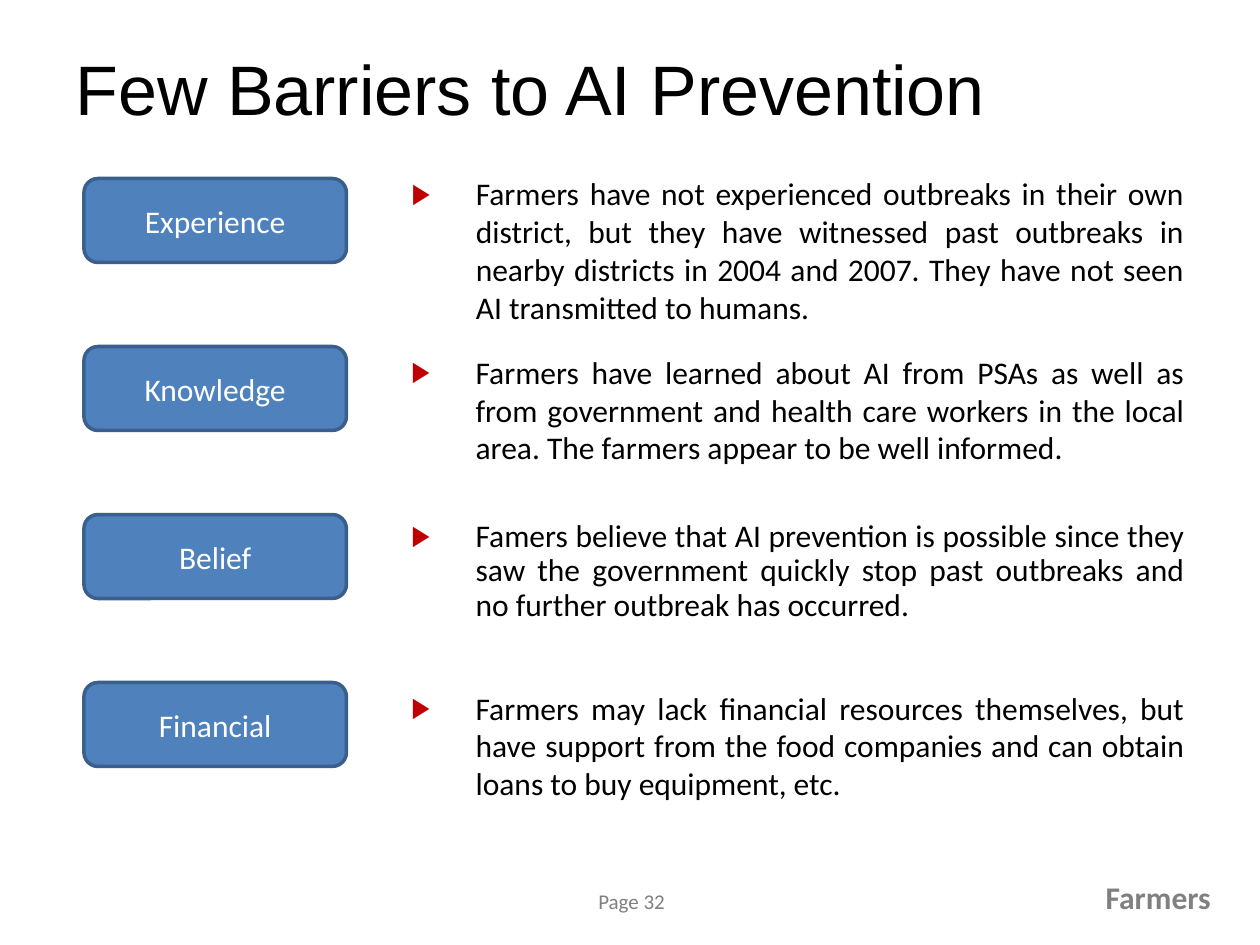
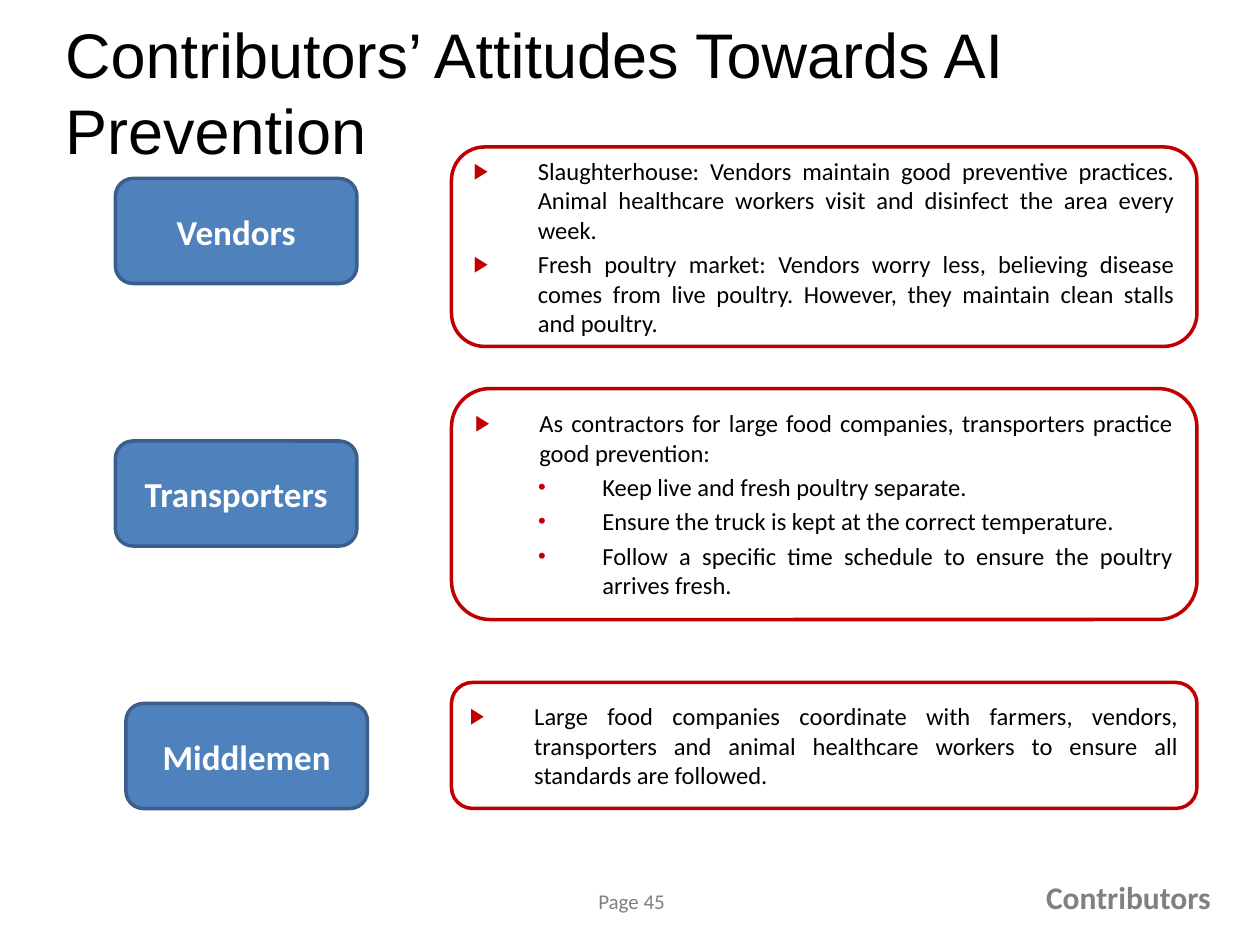
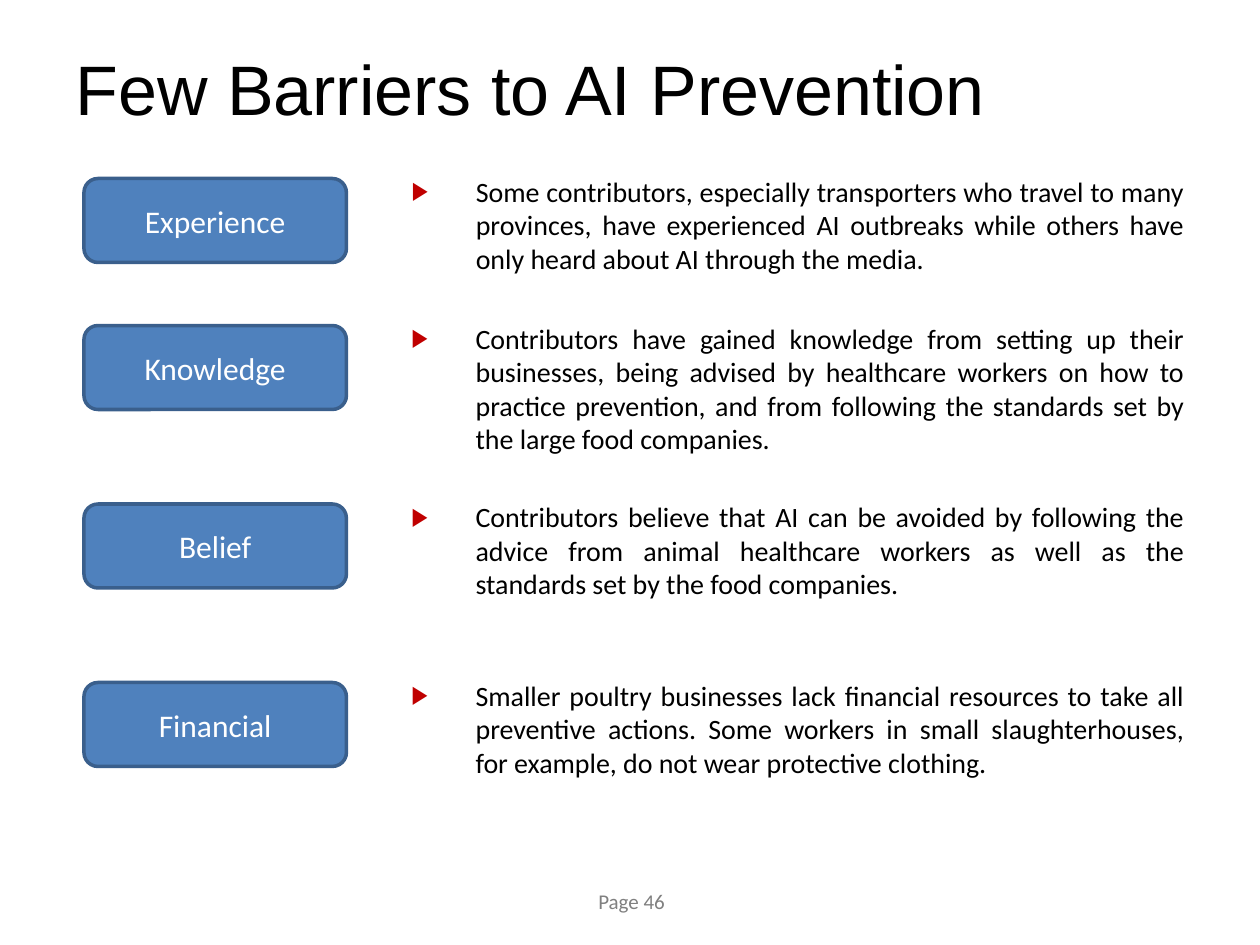
import lxml.etree
import pptx
import pptx.dml.color
import pptx.enum.shapes
import pptx.enum.text
import pptx.oxml.ns
import pptx.util

RGBColor = pptx.dml.color.RGBColor
Align = pptx.enum.text.PP_ALIGN
Anchor = pptx.enum.text.MSO_ANCHOR

BLACK = RGBColor(0x00, 0x00, 0x00)
WHITE = RGBColor(0xFF, 0xFF, 0xFF)
GRAY = RGBColor(0x80, 0x80, 0x80)
BLUE = RGBColor(0x4F, 0x81, 0xBD)
NAVY = RGBColor(0x3A, 0x5F, 0x8C)
RED = RGBColor(0xC0, 0x00, 0x00)

COLUMNS, ROWS = 120, 90
TITLE_AND_CONTENT, TITLE_ONLY = 1, 5
BULLETS = "▶•"
INDENT = pptx.util.Inches(0.51)
LEVEL_STEP = pptx.util.Inches(0.5)


class PageBuilder:
    def __init__(self, deck):
        self.deck = deck
        self.page = None

    def area(self, column, row, width, height):
        across = self.deck.slide_width / COLUMNS
        down = self.deck.slide_height / ROWS
        return [int(n) for n in (column * across, row * down, width * across, height * down)]

    def place(self, shape, area):
        shape.left, shape.top, shape.width, shape.height = self.area(*area)

    def start(self, layout, title, number, topic=None, size=40, corner=(6, 3.6)):
        self.page = self.deck.slides.add_slide(self.deck.slide_layouts[layout])
        box = self.page.shapes.title
        self.place(box, (*corner, 108, 9.4))
        self.set_text(box, title, size, BLACK, font="Arial", anchor=Anchor.MIDDLE)
        self.note(f"Page {number}", (55.8, 84, 10, 3.6), 12)
        if topic:
            self.note(topic, (96.5, 83, 20, 4.8), 18, align=Align.RIGHT, bold=True)

    def style(self, para, text, size, color, font="Calibri", align=Align.LEFT, bold=False):
        para.text = text
        para.alignment = align
        para.font.name = font
        para.font.size = pptx.util.Pt(size)
        para.font.color.rgb = color
        para.font.bold = bold

    def prepare(self, box, anchor):
        frame = box.text_frame
        frame.word_wrap = True
        frame.auto_size = pptx.enum.text.MSO_AUTO_SIZE.NONE
        frame.vertical_anchor = anchor
        return frame

    def set_text(self, box, text, size, color, anchor=Anchor.TOP, **look):
        frame = self.prepare(box, anchor)
        self.style(frame.paragraphs[0], text, size, color, **look)

    def note(self, text, area, size, **look):
        box = self.page.shapes.add_textbox(*self.area(*area))
        self.set_text(box, text, size, GRAY, **look)

    def rounded(self, area, line, fill=None):
        box = self.page.shapes.add_shape(
            pptx.enum.shapes.MSO_SHAPE.ROUNDED_RECTANGLE, *self.area(*area))
        box.shadow.inherit = False
        if fill is None:
            box.fill.background()
        else:
            box.fill.solid()
            box.fill.fore_color.rgb = fill
        box.line.color.rgb = line
        box.line.width = pptx.util.Pt(2)
        return box

    def label(self, text, area, size=18, bold=False):
        box = self.rounded(area, NAVY, BLUE)
        self.set_text(box, text, size, WHITE, anchor=Anchor.MIDDLE, align=Align.CENTER, bold=bold)

    def bullets(self, box, items, size, spacing=1.0, anchor=Anchor.TOP):
        frame = self.prepare(box, anchor)
        for index, (level, text) in enumerate(items):
            para = frame.add_paragraph() if index else frame.paragraphs[0]
            self.style(para, text, size, BLACK, align=Align.JUSTIFY)
            para.level = level
            para.line_spacing = spacing
            para.space_before = pptx.util.Pt(size * 0.2)
            self.mark(para, level)

    def mark(self, para, level):
        qn = pptx.oxml.ns.qn
        props = para._p.get_or_add_pPr()
        props.set("marL", str(INDENT + level * LEVEL_STEP))
        props.set("indent", str(-INDENT))
        fonts = props.find(qn("a:defRPr"))
        marks = [
            lxml.etree.Element(qn("a:buClr")),
            lxml.etree.Element(qn("a:buSzPct"), val="90000"),
            lxml.etree.Element(qn("a:buFont"), typeface="Arial"),
            lxml.etree.Element(qn("a:buChar"), char=BULLETS[level]),
        ]
        lxml.etree.SubElement(marks[0], qn("a:srgbClr"), val=str(RED))
        for element in marks:
            fonts.addprevious(element)

    def bullet_text(self, text, area, size, spacing=1.0, box=None):
        if box is None:
            box = self.page.shapes.add_textbox(*self.area(*area))
        else:
            self.place(box, area)
        self.bullets(box, [(0, text)], size, spacing)

    def panel(self, items, area):
        self.bullets(self.rounded(area, RED), items, 14, anchor=Anchor.MIDDLE)

    def barriers(self, number, size, barriers, topic=None):
        self.start(TITLE_AND_CONTENT, "Few Barriers to AI Prevention", number, topic)
        body = self.page.placeholders[1]
        for name, label_row, text_row, spacing, text in barriers:
            self.label(name, (8, label_row, 25, 8))
            self.bullet_text(text, (38, text_row, 76, 14), size, spacing, body)
            body = None


FARMER_BARRIERS = [
    ("Experience", 17, 16, 1.0,
     "Farmers have not experienced outbreaks in their own district, but they have witnessed "
     "past outbreaks in nearby districts in 2004 and 2007. They have not seen AI transmitted "
     "to humans."),
    ("Knowledge", 33, 33, 1.0,
     "Farmers have learned about AI from PSAs as well as from government and health care "
     "workers in the local area. The farmers appear to be well informed."),
    ("Belief", 49, 49, 0.9,
     "Famers believe that AI prevention is possible since they saw the government quickly "
     "stop past outbreaks and no further outbreak has occurred."),
    ("Financial", 65, 65, 1.0,
     "Farmers may lack financial resources themselves, but have support from the food "
     "companies and can obtain loans to buy equipment, etc."),
]

CONTRIBUTOR_BARRIERS = [
    ("Experience", 17, 16, 1.0,
     "Some contributors, especially transporters who travel to many provinces, have "
     "experienced AI outbreaks while others have only heard about AI through the media."),
    ("Knowledge", 31, 30, 1.0,
     "Contributors have gained knowledge from setting up their businesses, being advised by "
     "healthcare workers on how to practice prevention, and from following the standards set "
     "by the large food companies."),
    ("Belief", 48, 47, 1.0,
     "Contributors believe that AI can be avoided by following the advice from animal "
     "healthcare workers as well as the standards set by the food companies."),
    ("Financial", 65, 64, 1.0,
     "Smaller poultry businesses lack financial resources to take all preventive actions. "
     "Some workers in small slaughterhouses, for example, do not wear protective clothing."),
]

ATTITUDES = [
    ("Vendors", (11, 17), (14, 19), [
        (0, "Slaughterhouse: Vendors maintain good preventive practices. Animal healthcare "
            "workers visit and disinfect the area every week."),
        (0, "Fresh poultry market: Vendors worry less, believing disease comes from live "
            "poultry. However, they maintain clean stalls and poultry."),
    ]),
    ("Transporters", (11, 42), (37, 22), [
        (0, "As contractors for large food companies, transporters practice good prevention:"),
        (1, "Keep live and fresh poultry separate."),
        (1, "Ensure the truck is kept at the correct temperature."),
        (1, "Follow a specific time schedule to ensure the poultry arrives fresh."),
    ]),
    ("Middlemen", (12, 67), (65, 12), [
        (0, "Large food companies coordinate with farmers, vendors, transporters and animal "
            "healthcare workers to ensure all standards are followed."),
    ]),
]


def main():
    deck = pptx.Presentation()
    deck.slide_width = pptx.util.Inches(10)
    deck.slide_height = pptx.util.Inches(7.5)
    builder = PageBuilder(deck)

    builder.barriers(32, 18, FARMER_BARRIERS, "Farmers")

    builder.start(TITLE_ONLY, "Contributors’ Attitudes Towards AI Prevention", 45,
                  "Contributors", size=36, corner=(5, 4))
    for name, corner, (row, height), items in ATTITUDES:
        builder.label(name, (*corner, 23, 10), size=20, bold=True)
        builder.panel(items, (43, row, 71, height))

    builder.barriers(46, 16, CONTRIBUTOR_BARRIERS)

    deck.save("out.pptx")


if __name__ == "__main__":
    main()
